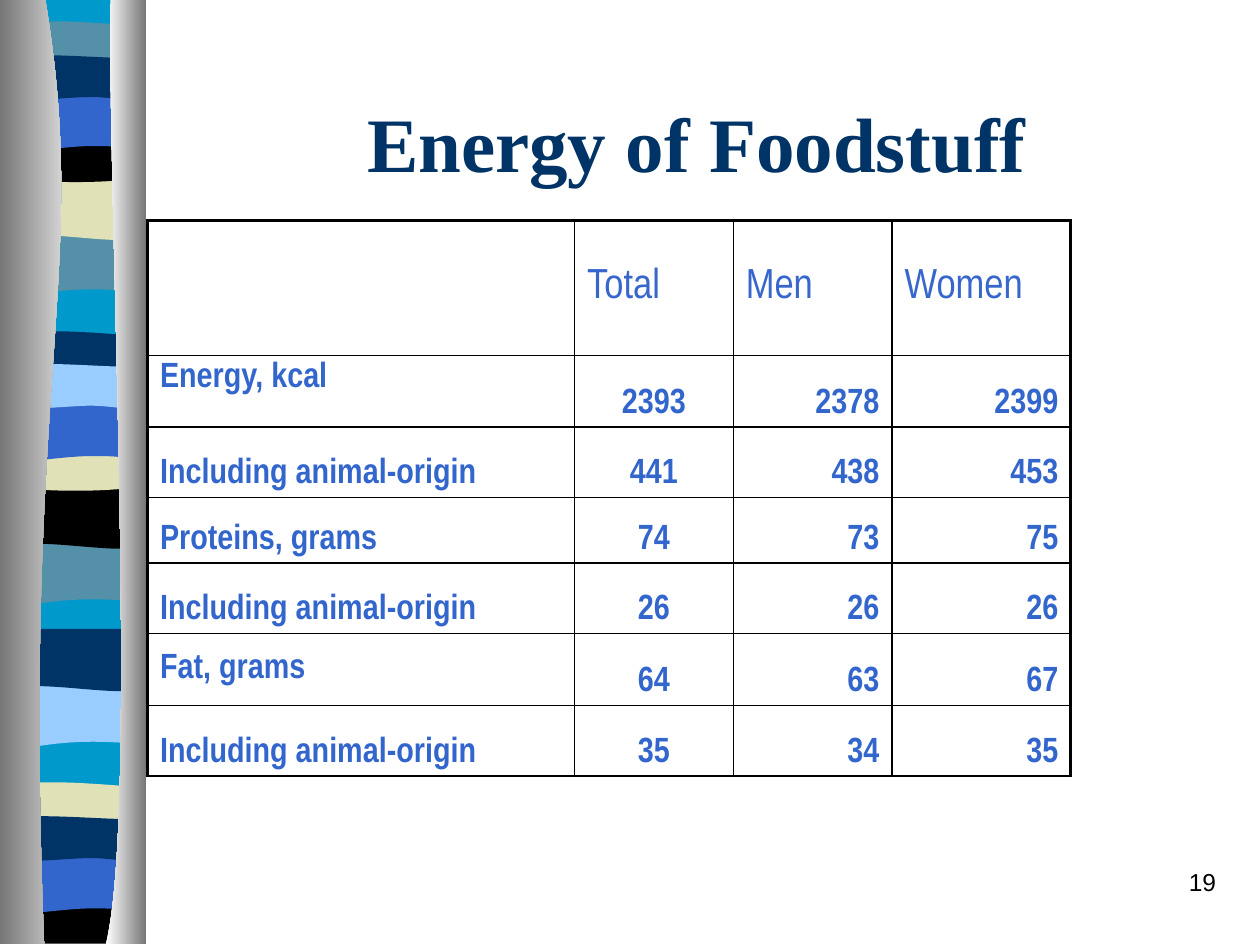
from lxml import etree
from pptx import Presentation
from pptx.dml.color import RGBColor
from pptx.enum.text import MSO_ANCHOR, PP_ALIGN
from pptx.oxml.ns import qn
from pptx.util import Inches, Pt

LEFT, CENTER, RIGHT = PP_ALIGN.LEFT, PP_ALIGN.CENTER, PP_ALIGN.RIGHT
TOP, MIDDLE, BOTTOM = MSO_ANCHOR.TOP, MSO_ANCHOR.MIDDLE, MSO_ANCHOR.BOTTOM

TITLE = "Energy of Foodstuff"
PAGE_NUMBER = "19"
HEADER = ["", "Total", "Men", "Women"]
ROWS = [
    ("Energy, kcal", "2393", "2378", "2399"),
    ("Including animal-origin", "441", "438", "453"),
    ("Proteins, grams", "74", "73", "75"),
    ("Including animal-origin", "26", "26", "26"),
    ("Fat, grams", "64", "63", "67"),
    ("Including animal-origin", "35", "34", "35"),
]
LABEL_ANCHORS = {"Energy, kcal": TOP, "Fat, grams": MIDDLE}
COLUMN_ALIGNMENTS = [LEFT, CENTER, RIGHT, RIGHT]
COLUMN_WIDTHS = [3.39, 1.26, 1.26, 1.42]
ROW_HEIGHTS = [1.07, 0.57, 0.56, 0.52, 0.56, 0.57, 0.56]

NAVY, BLUE, SKY = "003366", "3366CC", "99CCFF"
TEAL, SAND, CYAN, BLACK = "5490A8", "E1E1B7", "0099CC", "000000"

BAND_OUTLINES = {
    "base": [(1.14, 0), (1.14, 7.47), (0.05, 7.47), (0.05, 0)],
    "swell": [(1.14, 0), (1.14, 0.47), (0.39, 0.39, 0.24, 0.55, 0.05, 0.47), (0.05, 0)],
    "dip": [(1.14, 0), (1.14, 0.47), (0.96, 0.55, 0.39, 0.41, 0.05, 0.47), (0.05, 0)],
    "ribbon": [(1.14, 0.05), (1.14, 0.29), (0.96, 0.34, 0.24, 0.34, 0.05, 0.29), (0.05, 0.05),
               (0.12, 0, 0.29, 0.01, 0.47, 0.01), (0.65, 0.01, 1, 0.04, 1.14, 0.05)],
    "drape": [(1.14, 0), (1.14, 0.32), (0.96, 0.38, 0.24, 0.38, 0.05, 0.32), (0.05, 0),
              (0.72, 0.05, 0.91, 0, 1.14, 0)],
    "foot": [(1.14, 0), (1.14, 0.37), (0.05, 0.37), (0.05, 0), (0.72, 0.05, 0.91, 0, 1.14, 0)],
    "arch": [(1.14, 0), (1.14, 0.47), (0.97, 0.42, 0.9, 0.42, 0.72, 0.42),
             (0.54, 0.42, 0.22, 0.47, 0.05, 0.47), (0.05, 0)],
    "sheet": [(1.14, 0.05), (1.14, 0.36), (1.07, 0.41, 0.9, 0.36, 0.72, 0.36),
              (0.54, 0.36, 0.17, 0.41, 0.05, 0.36), (0.05, 0.05),
              (0.2, 0, 0.79, 0.05, 0.97, 0.05), (1.15, 0.05, 1.1, 0.05, 1.14, 0.05)],
}
BANDS = [
    ("base", 0, CYAN),
    ("swell", 1.85, TEAL), ("dip", 1.41, SAND), ("ribbon", 0.16, TEAL),
    ("drape", 1.08, BLACK), ("arch", 0.74, BLUE), ("sheet", 0.41, NAVY),
    ("swell", 4.31, TEAL), ("dip", 3.86, BLACK), ("ribbon", 2.62, NAVY),
    ("drape", 3.53, SAND), ("arch", 3.2, BLUE), ("sheet", 2.86, SKY),
    ("swell", 5.44, SKY), ("dip", 4.99, NAVY), ("ribbon", 6.2, SAND),
    ("foot", 7.12, BLACK), ("arch", 6.79, BLUE), ("sheet", 6.45, NAVY),
]
PILLARS = [
    ([(0.36, 0), (0.72, 2.16, 0.17, 2.96, 0.35, 7.49), (0, 7.49), (0, 0)], ("767676", "FFFFFF")),
    ([(0.88, 0), (0.84, 1.25, 1.11, 6.46, 0.84, 7.49), (1.16, 7.49), (1.16, 0)],
     ("FFFFFF", "767676")),
]


def color(value):
    return RGBColor.from_string(value)


def write(frame, text, font="Arial Narrow", size=20, fill=BLUE, bold=False, align=LEFT):
    paragraph = frame.paragraphs[0]
    paragraph.alignment = align
    run = paragraph.add_run()
    run.text = text
    run.font.name = font
    run.font.size = Pt(size)
    run.font.bold = bold
    run.font.color.rgb = color(fill)


def bend_curves(shape, outline):
    segments = iter(list(shape._element.iter(qn("a:lnTo"))))
    for step in outline[1:]:
        group = [next(segments) for _ in range(len(step) // 2)]
        if len(group) == 3:
            curve = etree.Element(qn("a:cubicBezTo"))
            group[0].addprevious(curve)
            for segment in group:
                curve.append(segment[0])
                segment.getparent().remove(segment)


def add_outline(slide, outline, top, *fills):
    points = [(Inches(step[index]), Inches(step[index + 1] + top))
              for step in outline for index in range(0, len(step), 2)]
    builder = slide.shapes.build_freeform(*points[0])
    builder.add_line_segments(points[1:], close=True)
    shape = builder.convert_to_shape()
    bend_curves(shape, outline)
    shape.shadow.inherit = False
    shape.line.fill.background()
    if len(fills) == 1:
        shape.fill.solid()
        shape.fill.fore_color.rgb = color(fills[0])
    else:
        shape.fill.gradient()
        shape.fill.gradient_angle = 0
        for stop, fill in zip(shape.fill.gradient_stops, fills):
            stop.color.rgb = color(fill)


def set_borders(cell, widths):
    properties = cell._tc.get_or_add_tcPr()
    for side, width in widths.items():
        line = etree.SubElement(properties, qn(f"a:ln{side}"), w=str(Pt(width)))
        solid = etree.SubElement(line, qn("a:solidFill"))
        etree.SubElement(solid, qn("a:srgbClr"), val=BLACK)


def add_energy_table(slide):
    row_count, column_count = len(ROW_HEIGHTS), len(COLUMN_WIDTHS)
    table = slide.shapes.add_table(row_count, column_count, Inches(1.17), Inches(1.75),
                                   Inches(sum(COLUMN_WIDTHS)), Inches(sum(ROW_HEIGHTS))).table
    table.first_row = table.horz_banding = False
    for column, width in zip(table.columns, COLUMN_WIDTHS):
        column.width = Inches(width)
    for row, height in zip(table.rows, ROW_HEIGHTS):
        row.height = Inches(height)
    for row_index, values in enumerate([HEADER, *ROWS]):
        for column_index, value in enumerate(values):
            cell = table.cell(row_index, column_index)
            set_borders(cell, {"L": 2 if column_index == 0 else 1,
                               "R": 2 if column_index == column_count - 1 else 1,
                               "T": 2 if row_index == 0 else 1, "B": 1})
            cell.fill.background()
            if row_index == 0:
                cell.vertical_anchor = MIDDLE
                if value:
                    write(cell.text_frame, value, size=24, fill="3766CC")
            else:
                cell.vertical_anchor = LABEL_ANCHORS.get(value, BOTTOM)
                write(cell.text_frame, value, bold=True, align=COLUMN_ALIGNMENTS[column_index])


def main():
    presentation = Presentation()
    presentation.slide_width, presentation.slide_height = Inches(10), Inches(7.5)
    slide = presentation.slides.add_slide(presentation.slide_layouts[5])

    for name, top, fill in BANDS:
        add_outline(slide, BAND_OUTLINES[name], top, fill)
    for outline, fills in PILLARS:
        add_outline(slide, outline, 0, *fills)

    title = slide.shapes.title
    title.left, title.top, title.width, title.height = map(Inches, (1.28, 0.5, 8.5, 1.25))
    title.text_frame.vertical_anchor = MIDDLE
    write(title.text_frame, TITLE, font="Times New Roman", size=44, fill=NAVY, bold=True, align=CENTER)

    add_energy_table(slide)

    number_box = slide.shapes.add_textbox(*map(Inches, (7.67, 6.83, 2.08, 0.5)))
    number_box.text_frame.word_wrap = True
    write(number_box.text_frame, PAGE_NUMBER, font="Arial", size=14, fill=BLACK, align=RIGHT)

    presentation.save("out.pptx")


if __name__ == "__main__":
    main()
